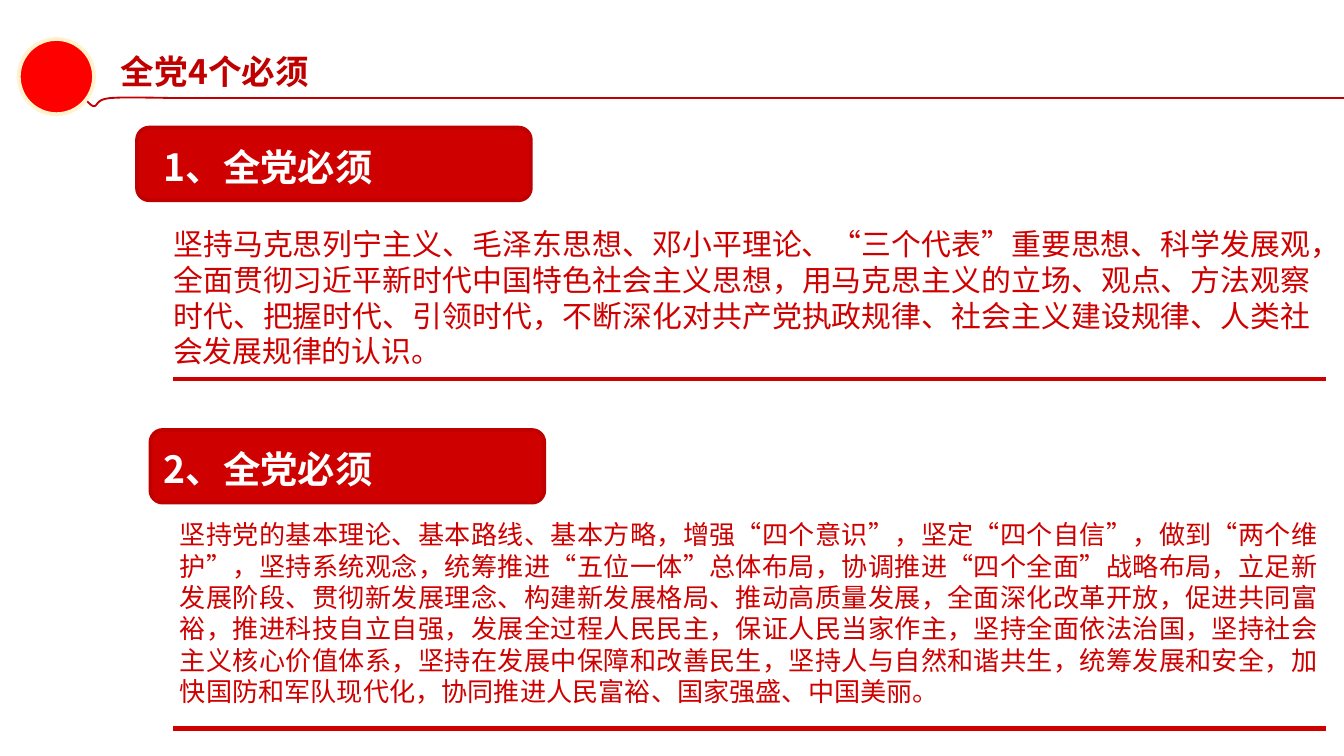
import pptx
import pptx.util
import pptx.dml.color
import pptx.enum.lang
import pptx.enum.shapes
import pptx.enum.text
from lxml import etree

EMU_PER_PX = 9144  # 100 px to the inch
FONT = "Noto Sans CJK SC"
DRAWING_NS = "{http://schemas.openxmlformats.org/drawingml/2006/main}"
LINE_HEIGHT = 1.2

DARK_RED = pptx.dml.color.RGBColor(0xC0, 0x00, 0x00)
RED = pptx.dml.color.RGBColor(0xCE, 0x00, 0x00)
BRIGHT_RED = pptx.dml.color.RGBColor(0xFF, 0x00, 0x00)
CREAM = pptx.dml.color.RGBColor(0xFF, 0xF2, 0xCC)
WHITE = pptx.dml.color.RGBColor(0xFF, 0xFF, 0xFF)

SHAPE = pptx.enum.shapes.MSO_SHAPE
ALIGN = pptx.enum.text.PP_ALIGN

# Flourish under the title: start point, then curves of two handles and an end
FLOURISH_START = (36, 77)
FLOURISH_CURVES = [
    ((40, 76), (44, 71), (48, 72)),
    ((53, 72), (49, 77), (53, 78)),
    ((57, 79), (59, 74), (62, 74)),
    ((65, 74), (67, 79), (70, 79)),
    ((73, 79), (71, 74), (82, 73)),
    ((93, 72), (123, 73), (134, 73)),
]

# Each section: heading, badge left and top, body text, body box, size, rule height
SECTIONS = [
    ("1、全党必须", (102, 95),
     "坚持马克思列宁主义、毛泽东思想、邓小平理论、“三个代表”重要思想、科学发展观，"
     "全面贯彻习近平新时代中国特色社会主义思想，用马克思主义的立场、观点、方法观察"
     "时代、把握时代、引领时代，不断深化对共产党执政规律、社会主义建设规律、人类社"
     "会发展规律的认识。",
     (119, 163, 867, 118), 16, 282),
    ("2、全党必须", (112, 320),
     "坚持党的基本理论、基本路线、基本方略，增强“四个意识”，坚定“四个自信”，做到“两个维"
     "护”，坚持系统观念，统筹推进“五位一体”总体布局，协调推进“四个全面”战略布局，立足新"
     "发展阶段、贯彻新发展理念、构建新发展格局、推动高质量发展，全面深化改革开放，促进共同富"
     "裕，推进科技自立自强，发展全过程人民民主，保证人民当家作主，坚持全面依法治国，坚持社会"
     "主义核心价值体系，坚持在发展中保障和改善民生，坚持人与自然和谐共生，统筹发展和安全，加"
     "快国防和军队现代化，协同推进人民富裕、国家强盛、中国美丽。",
     (124, 381, 867, 151), 14, 542),
]


def px(length):
    return pptx.util.Emu(round(length * EMU_PER_PX))


def write_text(box, text, *, size, color, bold=False, align=ALIGN.LEFT,
               insets=(10, 5, 10, 5)):
    frame = box.text_frame
    frame.word_wrap = True
    frame.auto_size = pptx.enum.text.MSO_AUTO_SIZE.NONE
    frame.vertical_anchor = pptx.enum.text.MSO_ANCHOR.TOP
    (frame.margin_left, frame.margin_top,
     frame.margin_right, frame.margin_bottom) = map(px, insets)
    para = frame.paragraphs[0]
    para.alignment = align
    para.line_spacing = pptx.util.Pt(size * LINE_HEIGHT)
    span = para.add_run()
    span.text = text
    span.font.size = pptx.util.Pt(size)
    span.font.bold = bold
    span.font.color.rgb = color
    span.font.name = FONT
    span.font.language_id = pptx.enum.lang.MSO_LANGUAGE_ID.SIMPLIFIED_CHINESE
    # East Asian typeface follows the Latin one
    latin = span._r.get_or_add_rPr().find(DRAWING_NS + "latin")
    east_asian = etree.Element(DRAWING_NS + "ea")
    east_asian.set("typeface", FONT)
    latin.addnext(east_asian)


def add_text(page, bounds, text, **style):
    box = page.shapes.add_textbox(*map(px, bounds))
    write_text(box, text, **style)


def add_title(page, bounds, text, **style):
    title = page.shapes.title
    title.left, title.top, title.width, title.height = map(px, bounds)
    write_text(title, text, **style)


def add_filled_shape(page, kind, bounds, fill, outline):
    shape = page.shapes.add_shape(kind, *map(px, bounds))
    shape.shadow.inherit = False
    shape.fill.solid()
    shape.fill.fore_color.rgb = fill
    shape.line.color.rgb = outline
    shape.line.width = pptx.util.Pt(2)


def add_rule(page, left, right, height, color, weight):
    rule = page.shapes.add_connector(
        pptx.enum.shapes.MSO_CONNECTOR.STRAIGHT,
        px(left), px(height), px(right), px(height))
    rule.line.color.rgb = color
    rule.line.width = pptx.util.Pt(weight)
    etree.SubElement(rule._element.spPr, DRAWING_NS + "effectLst")


def curve_points(start, curves, steps=10):
    points = []
    for first, second, end in curves:
        for step in range(1, steps + 1):
            t = step / steps
            weights = ((1 - t) ** 3, 3 * t * (1 - t) ** 2, 3 * t * t * (1 - t), t ** 3)
            points.append(tuple(
                px(sum(w * value for w, value in zip(weights, axis)))
                for axis in zip(start, first, second, end)))
        start = end
    return points


def add_flourish(page):
    builder = page.shapes.build_freeform(*map(px, FLOURISH_START), scale=1.0)
    builder.add_line_segments(curve_points(FLOURISH_START, FLOURISH_CURVES), close=False)
    flourish = builder.convert_to_shape()
    flourish.shadow.inherit = False
    flourish.fill.background()
    flourish.line.color.rgb = DARK_RED
    flourish.line.width = pptx.util.Pt(1)


def add_section(page, heading, badge, body, body_bounds, body_size, rule_height):
    left, top = badge
    add_filled_shape(page, SHAPE.ROUNDED_RECTANGLE, (left, top, 293, 54), RED, DARK_RED)
    add_text(page, (112, top + 7, 293, 44), heading, size=20, color=WHITE, bold=True)
    add_text(page, body_bounds, body, size=body_size, color=RED, align=ALIGN.JUSTIFY)
    add_rule(page, 129, 987, rule_height, RED, 2.5)


def main():
    deck = pptx.Presentation()
    # Widescreen, 16 to 9
    deck.slide_width = px(1000)
    deck.slide_height = px(1000 * 9 / 16)
    page = deck.slides.add_slide(deck.slide_layouts.get_by_name("Title Only"))

    # Header
    add_flourish(page)
    add_rule(page, 134, 1000, 73, DARK_RED, 1)
    add_filled_shape(page, SHAPE.OVAL, (14, 29, 56, 56), BRIGHT_RED, CREAM)
    add_title(page, (78, 34, 580, 37), "全党4个必须", size=18, color=DARK_RED,
              bold=True, insets=(12, 4, 7, 4))

    # Numbered sections
    for section in SECTIONS:
        add_section(page, *section)

    deck.save("out.pptx")


if __name__ == "__main__":
    main()
